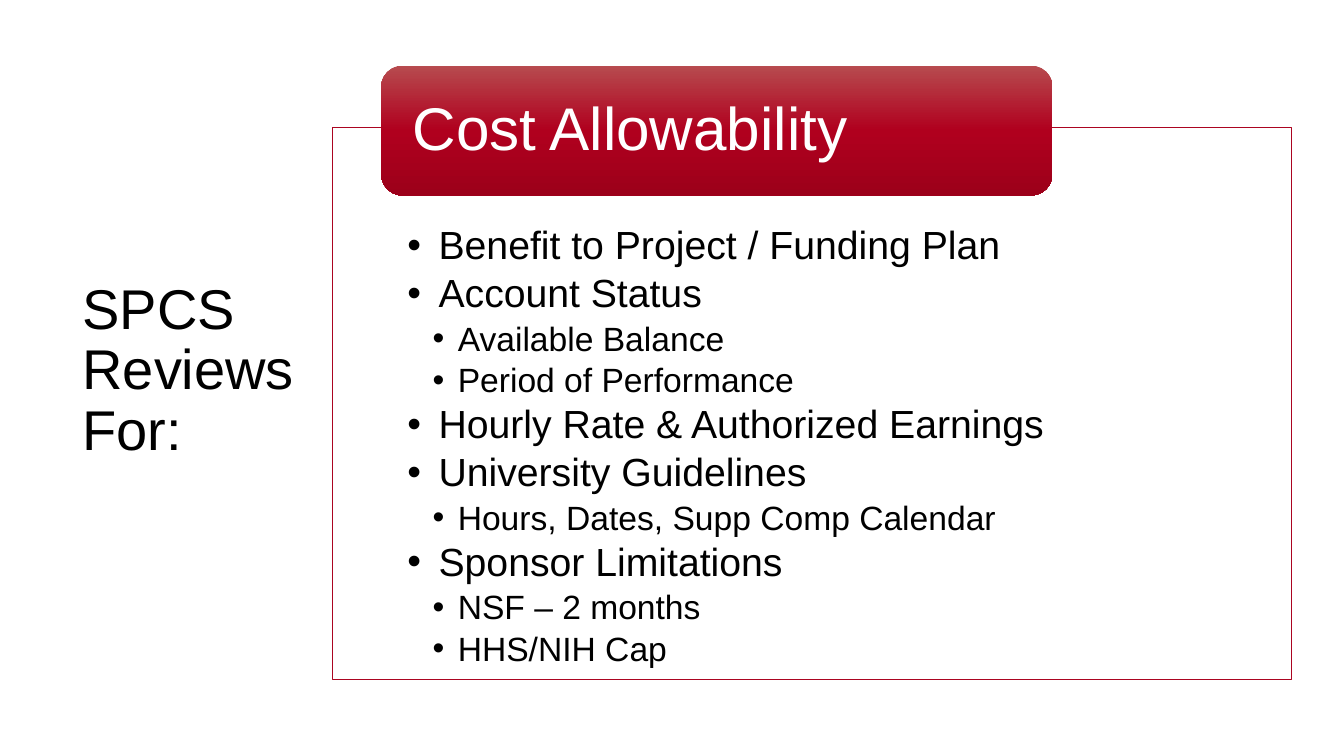
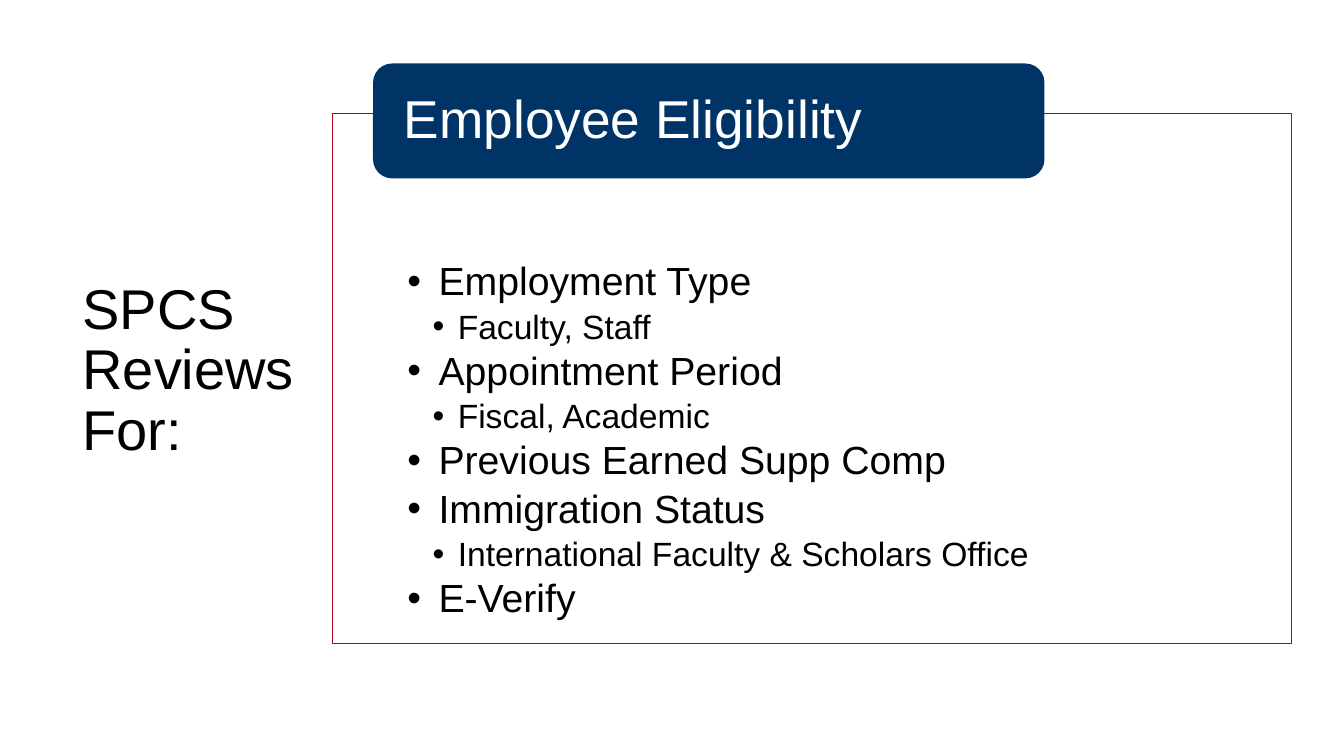
from copy import deepcopy
from dataclasses import dataclass

from lxml.etree import SubElement
from pptx import Presentation
from pptx.dml.color import RGBColor
from pptx.enum.shapes import MSO_SHAPE
from pptx.enum.text import MSO_ANCHOR, PP_ALIGN
from pptx.oxml.ns import qn
from pptx.shapes.autoshape import Shape
from pptx.slide import Slide
from pptx.text.text import TextFrame, _Paragraph
from pptx.util import Inches, Pt


@dataclass(frozen=True)
class Theme:
    font: str = "Arial"
    ink: str = "000000"
    paper: str = "FFFFFF"
    edge: str = "AB0521"
    red: tuple[str, ...] = ("B74B4F", "B0001E", "9C001A")
    navy: tuple[str, ...] = ("003366",)
    title: int = 40
    item: int = 28
    sub: int = 24
    leading: float = 0.9
    gap: float = 0.15  # space after a bullet, as a share of its type size


@dataclass(frozen=True)
class Box:
    left: float
    top: float
    width: float
    height: float

    def lengths(self) -> list[Inches]:
        return [Inches(v) for v in (self.left, self.top, self.width, self.height)]


@dataclass(frozen=True)
class Topic:
    name: str
    size: int
    fill: tuple[str, ...]
    bar: Box
    panel: Box
    inset: float
    points: list[tuple[str, list[str]]]


THEME = Theme()
TITLE = ["SPCS", "Reviews", "For:"]
TITLE_BOX = Box(0.72, 0.62, 2.98, 6.13)
INDENTS = {1: (0.31, -0.31), 2: (0.5, -0.25)}

TOPICS = [
    Topic(
        "Cost Allowability", 43, THEME.red,
        Box(3.78, 0.65, 6.66, 1.29), Box(3.3, 1.26, 9.51, 5.48), 0.98,
        [
            ("Benefit to Project / Funding Plan", []),
            ("Account Status", ["Available Balance", "Period of Performance"]),
            ("Hourly Rate & Authorized Earnings", []),
            ("University Guidelines", ["Hours, Dates, Supp Comp Calendar"]),
            ("Sponsor Limitations", ["NSF – 2 months", "HHS/NIH Cap"]),
        ],
    ),
    Topic(
        "Employee Eligibility", 38, THEME.navy,
        Box(3.7, 0.63, 6.66, 1.14), Box(3.3, 1.12, 9.51, 5.26), 1.48,
        [
            ("Employment Type", ["Faculty, Staff"]),
            ("Appointment Period", ["Fiscal, Academic"]),
            ("Previous Earned Supp Comp", []),
            ("Immigration Status", ["International Faculty & Scholars Office"]),
            ("E-Verify", []),
        ],
    ),
]


def add_run(para: _Paragraph, text: str, size: int, color: str) -> None:
    para.alignment = PP_ALIGN.LEFT
    para.line_spacing = THEME.leading
    run = para.add_run()
    run.text = text
    run.font.name = THEME.font
    run.font.size = Pt(size)
    run.font.color.rgb = RGBColor.from_string(color)


def set_frame(frame: TextFrame, anchor: MSO_ANCHOR, side: float,
              top: float, bottom: float) -> None:
    frame.word_wrap = True
    frame.vertical_anchor = anchor
    frame.margin_left = frame.margin_right = Inches(side)
    frame.margin_top, frame.margin_bottom = Inches(top), Inches(bottom)


def add_bullet(para: _Paragraph, text: str, level: int) -> None:
    size = THEME.item if level == 1 else THEME.sub
    para.level = level
    props = para._p.get_or_add_pPr()
    left, hang = INDENTS[level]
    props.set("marL", str(Inches(left)))
    props.set("indent", str(Inches(hang)))
    SubElement(props, qn("a:buFont"), typeface=THEME.font)
    SubElement(props, qn("a:buChar"), char="•")
    para.space_after = Pt(round(size * THEME.gap, 1))
    add_run(para, text, size, THEME.ink)


def paint(shape: Shape, colors: tuple[str, ...]) -> None:
    """Fill with one colour, or with an even gradient from top to bottom."""
    fill = shape.fill
    if len(colors) == 1:
        fill.solid()
        fill.fore_color.rgb = RGBColor.from_string(colors[0])
        return
    fill.gradient()
    fill.gradient_angle = 270
    stops = next(shape._element.spPr.iter(qn("a:gsLst")))
    for _ in colors[2:]:
        stops.append(deepcopy(stops[0]))
    for i, (stop, color) in enumerate(zip(fill.gradient_stops, colors)):
        stop.position = i / (len(colors) - 1)
        stop.color.rgb = RGBColor.from_string(color)


def add_title(slide: Slide) -> None:
    frame = slide.shapes.add_textbox(*TITLE_BOX.lengths()).text_frame
    set_frame(frame, MSO_ANCHOR.MIDDLE, 0.1, 0.05, 0.05)
    para = frame.paragraphs[0]
    for i, word in enumerate(TITLE):
        if i:
            para.add_line_break()
        add_run(para, word, THEME.title, THEME.ink)


def add_panel(slide: Slide, topic: Topic) -> None:
    panel = slide.shapes.add_shape(MSO_SHAPE.RECTANGLE, *topic.panel.lengths())
    panel.shadow.inherit = False
    paint(panel, (THEME.paper,))
    tint = next(panel._element.spPr.iter(qn("a:srgbClr")))
    SubElement(tint, qn("a:alpha"), val="90000")
    panel.line.color.rgb = RGBColor.from_string(THEME.edge)
    panel.line.width = Pt(0.5)
    frame = panel.text_frame
    set_frame(frame, MSO_ANCHOR.TOP, 0.74, topic.inset, 0.2)
    rows = [row for item, subs in topic.points
            for row in [(item, 1), *((sub, 2) for sub in subs)]]
    for i, (text, level) in enumerate(rows):
        para = frame.add_paragraph() if i else frame.paragraphs[0]
        add_bullet(para, text, level)


def add_bar(slide: Slide, topic: Topic) -> None:
    bar = slide.shapes.add_shape(MSO_SHAPE.ROUNDED_RECTANGLE, *topic.bar.lengths())
    bar.shadow.inherit = False
    bar.line.fill.background()
    paint(bar, topic.fill)
    set_frame(bar.text_frame, MSO_ANCHOR.MIDDLE, 0.25, 0, 0)
    add_run(bar.text_frame.paragraphs[0], topic.name, topic.size, THEME.paper)


def main() -> None:
    deck = Presentation()
    deck.slide_width, deck.slide_height = Inches(13.33), Inches(7.5)
    for topic in TOPICS:
        slide = deck.slides.add_slide(deck.slide_layouts[6])
        add_title(slide)
        add_panel(slide, topic)
        add_bar(slide, topic)
    deck.save("out.pptx")


if __name__ == "__main__":
    main()
